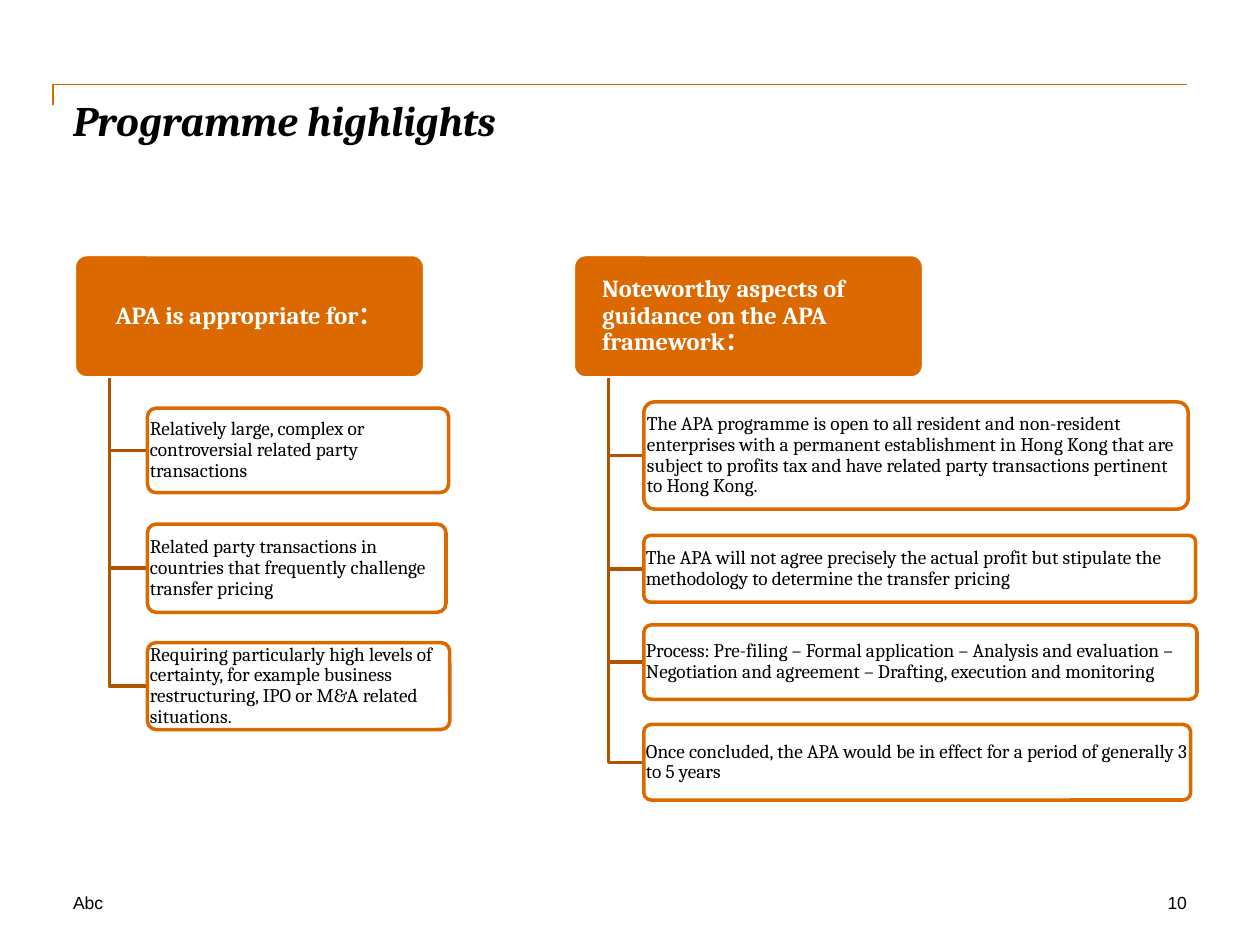
"""Build the programme highlights slide with two branching lists."""
from dataclasses import dataclass

from lxml import etree
from pptx import Presentation
from pptx.dml.color import RGBColor
from pptx.enum import shapes, text
from pptx.oxml import ns
from pptx.util import Inches, Pt


@dataclass(frozen=True)
class Theme:
    orange: RGBColor = RGBColor(0xDC, 0x69, 0x00)
    brown: RGBColor = RGBColor(0xB0, 0x54, 0x00)
    white: RGBColor = RGBColor(0xFF, 0xFF, 0xFF)
    black: RGBColor = RGBColor(0x00, 0x00, 0x00)
    serif: str = "Cambria"
    sans: str = "Arial"
    title: int = 24
    header: int = 14
    body: int = 11
    footer: int = 10


T = Theme()


def write(s, words, font, size, color, bold=False, italic=False,
          align=text.PP_ALIGN.LEFT, anchor=text.MSO_ANCHOR.MIDDLE, spacing=0.9):
    tf = s.text_frame
    tf.word_wrap = True
    tf.vertical_anchor = anchor
    tf.margin_left = tf.margin_right = tf.margin_top = tf.margin_bottom = 0
    p = tf.paragraphs[0]
    p.alignment = align
    p.line_spacing = spacing
    r = p.add_run()
    r.text = words
    r.font.name, r.font.size, r.font.color.rgb = font, Pt(size), color
    r.font.bold, r.font.italic = bold, italic
    return p


def elbow(sp, points, color, width):
    start, *rest = [(Inches(x), Inches(y)) for x, y in points]
    fb = sp.build_freeform(*start)
    fb.add_line_segments(rest, close=False)
    s = fb.convert_to_shape()
    s.shadow.inherit = False
    s.fill.background()
    s.line.color.rgb = color
    s.line.width = Pt(width)


prs = Presentation()
prs.slide_width, prs.slide_height = Inches(10), Inches(7.5)
slide = prs.slides.add_slide(prs.slide_layouts[5])
sp = slide.shapes

elbow(sp, [(0.42, 0.83), (0.42, 0.67), (9.42, 0.67)], T.orange, 1)

title = sp.title
title.left, title.top = Inches(0.58), Inches(0.75)
title.width, title.height = Inches(8.83), Inches(1)
write(title, "Programme highlights", T.serif, T.title, T.black, bold=True, italic=True,
      anchor=text.MSO_ANCHOR.TOP, spacing=1.0)

footers = [
    (0.58, 2.83, "Abc", text.PP_ALIGN.LEFT),
    (7.75, 1.67, "10", text.PP_ALIGN.RIGHT),
]
for x, w, words, align in footers:
    s = sp.add_textbox(Inches(x), Inches(7.08), Inches(w), Inches(0.17))
    write(s, words, T.sans, T.footer, T.black, align=align,
          anchor=text.MSO_ANCHOR.TOP, spacing=1.0)

header_top, header_width, header_height = 2.02, 2.78, 0.98
branches = [
    (0.59, 1.17, "APA is appropriate for：", text.PP_ALIGN.CENTER, 0, [
        (3.24, 2.39, 0.67, "Relatively large, complex or controversial related party "
                           "transactions"),
        (4.16, 2.37, 0.70, "Related party transactions in countries that frequently "
                           "challenge transfer pricing"),
        (5.10, 2.40, 0.69, "Requiring particularly high levels of certainty, for example "
                           "business restructuring, IPO or M&A related situations."),
    ]),
    (4.55, 5.11, "Noteworthy aspects of guidance on the APA framework：",
     text.PP_ALIGN.LEFT, 0.2, [
        (3.19, 4.32, 0.85, "The APA programme is open to all resident and non-resident "
                           "enterprises with a permanent establishment in Hong Kong that "
                           "are subject to profits tax and have related party "
                           "transactions pertinent to Hong Kong."),
        (4.25, 4.38, 0.53, "The APA will not agree precisely the actual profit but "
                           "stipulate the methodology to determine the transfer pricing"),
        (4.96, 4.39, 0.59, "Process: Pre-filing – Formal application – Analysis and "
                           "evaluation – Negotiation and agreement – Drafting, execution "
                           "and monitoring"),
        (5.75, 4.34, 0.60, "Once concluded, the APA would be in effect for a period of "
                           "generally 3 to 5 years"),
    ]),
]

for x, item_x, heading, align, indent, items in branches:
    s = sp.add_shape(shapes.MSO_SHAPE.ROUNDED_RECTANGLE, Inches(x), Inches(header_top),
                     Inches(header_width), Inches(header_height))
    s.adjustments[0] = 0.1
    s.shadow.inherit = False
    s.fill.solid()
    s.fill.fore_color.rgb = T.orange
    s.line.color.rgb = T.white
    s.line.width = Pt(2)
    p = write(s, heading, T.serif, T.header, T.white, bold=True, align=align)
    p._p.get_or_add_pPr().set("marL", str(Inches(indent)))

    spine = x + header_width / 10
    bottom = header_top + header_height
    for y, w, h, words in items:
        middle = y + h / 2
        elbow(sp, [(spine, bottom), (spine, middle), (item_x, middle)], T.brown, 2)
        s = sp.add_shape(shapes.MSO_SHAPE.ROUNDED_RECTANGLE, Inches(item_x), Inches(y),
                         Inches(w), Inches(h))
        s.adjustments[0] = 0.1
        s.shadow.inherit = False
        s.fill.solid()
        s.fill.fore_color.rgb = T.white
        color = s._element.spPr.find(ns.qn("a:solidFill")).find(ns.qn("a:srgbClr"))
        etree.SubElement(color, ns.qn("a:alpha")).set("val", "90000")
        s.line.color.rgb = T.orange
        s.line.width = Pt(2)
        write(s, words, T.serif, T.body, T.black)

prs.save("out.pptx")
